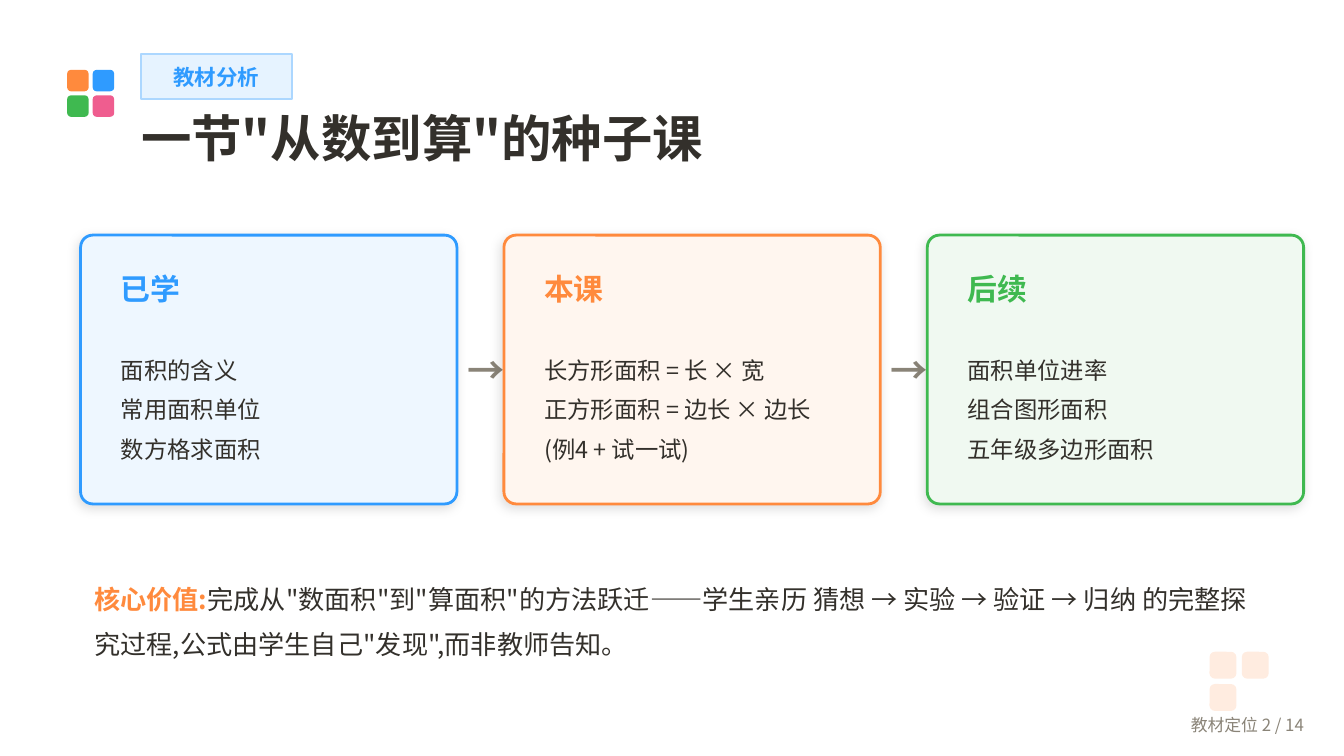
import pptx
import pptx.util
import pptx.dml.color
import pptx.enum.shapes
import pptx.enum.text
import pptx.oxml
import pptx.oxml.ns
import lxml.etree

RGBColor = pptx.dml.color.RGBColor
Inches = pptx.util.Inches
Pt = pptx.util.Pt
MSO_SHAPE = pptx.enum.shapes.MSO_SHAPE
ANCHOR = pptx.enum.text.MSO_ANCHOR
ALIGN = pptx.enum.text.PP_ALIGN

WHITE = RGBColor(0xFF, 0xFF, 0xFF)
BLUE = RGBColor(0x2F, 0x9B, 0xFF)
ORANGE = RGBColor(0xFF, 0x8A, 0x3D)
GREEN = RGBColor(0x3F, 0xB9, 0x50)
PINK = RGBColor(0xEF, 0x5D, 0x8F)
INK = RGBColor(0x33, 0x30, 0x2B)
GREY = RGBColor(0x8A, 0x84, 0x78)
PEACH = RGBColor(0xFF, 0xEC, 0xE0)
TAG_FILL = RGBColor(0xE6, 0xF3, 0xFF)
TAG_LINE = RGBColor(0xAC, 0xD7, 0xFF)
BLUE_TINT = RGBColor(0xEE, 0xF7, 0xFF)
ORANGE_TINT = RGBColor(0xFF, 0xF6, 0xEF)
GREEN_TINT = RGBColor(0xF0, 0xF9, 0xF1)

FONT = "Noto Sans CJK SC"
CARD_LEFT, CARD_TOP, CARD_WIDTH, CARD_HEIGHT = 0.6, 1.75, 2.8, 2
COLUMN_STEP = 3.15
CARD_PADDING = 0.2

CARDS = [
    ("已学", BLUE, BLUE_TINT, ["面积的含义", "常用面积单位", "数方格求面积"]),
    ("本课", ORANGE, ORANGE_TINT,
     ["长方形面积 = 长 × 宽", "正方形面积 = 边长 × 边长", "(例4 + 试一试)"]),
    ("后续", GREEN, GREEN_TINT, ["面积单位进率", "组合图形面积", "五年级多边形面积"]),
]
CORE_LABEL = "核心价值:"
CORE_TEXT = ("完成从\"数面积\"到\"算面积\"的方法跃迁——学生亲历 猜想 → 实验 → 验证 → 归纳 "
             "的完整探究过程,公式由学生自己\"发现\",而非教师告知。")


def apply_format(target, values):
    """Set every attribute named in values on the target."""
    for name, value in values.items():
        setattr(target, name, value)


def place(shape, left, top, width, height):
    """Move and size a shape, in inches."""
    box = {"left": left, "top": top, "width": width, "height": height}
    apply_format(shape, {name: Inches(value) for name, value in box.items()})


def add_run(paragraph, text, size, color, bold=False):
    """Add a run in the slide's font for Latin and East Asian text."""
    run = paragraph.add_run()
    run.text = text
    apply_format(run.font, {"name": FONT, "size": Pt(size), "bold": bold})
    run.font.color.rgb = color
    east_asian = lxml.etree.SubElement(run.font._element, pptx.oxml.ns.qn("a:ea"))
    east_asian.set("typeface", FONT)


def write(shape, lines, anchor=ANCHOR.MIDDLE, align=ALIGN.LEFT, spacing=None, inset=None):
    """Fill a shape with paragraphs, each a list of run arguments."""
    frame = shape.text_frame
    apply_format(frame, {"word_wrap": True, "vertical_anchor": anchor,
                         "auto_size": pptx.enum.text.MSO_AUTO_SIZE.NONE})
    if inset is not None:
        sides = ("margin_left", "margin_top", "margin_right", "margin_bottom")
        apply_format(frame, dict.fromkeys(sides, Inches(inset)))
    for index, runs in enumerate(lines):
        paragraph = frame.paragraphs[0] if index == 0 else frame.add_paragraph()
        properties = paragraph._p.get_or_add_pPr()
        if shape.is_placeholder:
            properties.set("marL", "0")
            properties.set("indent", "0")
            lxml.etree.SubElement(properties, pptx.oxml.ns.qn("a:buNone"))
        apply_format(paragraph, {"alignment": align, "space_before": Pt(0)})
        if spacing:
            paragraph.line_spacing = Pt(spacing)
        for run in runs:
            add_run(paragraph, *run)


def add_label(slide, box, run, **options):
    """Add a one-line text box."""
    label = slide.shapes.add_textbox(*map(Inches, box))
    write(label, [[run]], **options)


def fill_placeholder(placeholder, box, lines, **options):
    """Place a template placeholder above the shapes drawn so far and fill it."""
    place(placeholder, *box)
    placeholder._element.getparent().append(placeholder._element)
    write(placeholder, lines, **options)


def add_panel(slide, kind, box, fill, line=None, line_width=1, rounding=None):
    """Add a flat filled shape."""
    panel = slide.shapes.add_shape(kind, *map(Inches, box))
    panel.shadow.inherit = False
    panel.fill.solid()
    panel.fill.fore_color.rgb = fill
    if line is None:
        panel.line.fill.background()
    else:
        panel.line.color.rgb = line
        panel.line.width = Pt(line_width)
    if rounding is not None:
        panel.adjustments[0] = rounding
    return panel


def add_tiles(slide, left, top, size, step, rounding, colors):
    """Add small rounded squares in two columns, row by row."""
    for index, color in enumerate(colors):
        row, column = divmod(index, 2)
        box = (left + column * step, top + row * step, size, size)
        add_panel(slide, MSO_SHAPE.ROUNDED_RECTANGLE, box, color, rounding=rounding)


def add_soft_shadow(shape):
    """Give a shape a faint blurred shadow."""
    effects = shape._element.spPr.find(pptx.oxml.ns.qn("a:effectLst"))
    effects.append(pptx.oxml.parse_xml(
        f'<a:outerShdw {pptx.oxml.ns.nsdecls("a")} blurRad="{Pt(6)}" dist="{Pt(2)}" '
        f'dir="{135 * 60000}" algn="bl" rotWithShape="0">'
        '<a:srgbClr val="000000"><a:alpha val="12000"/></a:srgbClr></a:outerShdw>'))


def add_card(slide, column, placeholder):
    """Add one stage card with its heading and list."""
    heading, color, tint, items = CARDS[column]
    left = CARD_LEFT + column * COLUMN_STEP
    inner_left, inner_width = left + CARD_PADDING, CARD_WIDTH - 2 * CARD_PADDING
    card = add_panel(slide, MSO_SHAPE.ROUNDED_RECTANGLE,
                     (left, CARD_TOP, CARD_WIDTH, CARD_HEIGHT), tint, color, 1.5, 0.045)
    add_soft_shadow(card)
    add_label(slide, (inner_left, CARD_TOP + CARD_PADDING, inner_width, 0.4),
              (heading, 16, color, True))
    fill_placeholder(placeholder, (inner_left, 2.38, inner_width, 1.25),
                     [[(item, 12.5, INK)] for item in items], spacing=21)
    if column < len(CARDS) - 1:
        add_label(slide, (left + CARD_WIDTH - 0.02, 2.55, 0.4, 0.4), ("→", 20, GREY, True))


def main():
    """Build the slide and save it."""
    presentation = pptx.Presentation()
    presentation.slide_width, presentation.slide_height = Inches(10), Inches(5.625)
    slide = presentation.slides.add_slide(presentation.slide_layouts.get_by_name("Comparison"))
    slide.background.fill.solid()
    slide.background.fill.fore_color.rgb = WHITE
    title, *bodies = slide.placeholders

    add_tiles(slide, 9, 4.85, 0.2, 0.24, 0.2, [PEACH] * 3)
    add_tiles(slide, 0.5, 0.52, 0.16, 0.19, 0.18, [ORANGE, BLUE, GREEN, PINK])
    tag = add_panel(slide, MSO_SHAPE.RECTANGLE, (1.05, 0.4, 1.12, 0.34), TAG_FILL, TAG_LINE)
    write(tag, [[("教材分析", 11.5, BLUE, True)]], align=ALIGN.CENTER, inset=0)
    fill_placeholder(title, (1.05, 0.8, 8.4, 0.55),
                     [[("一节\"从数到算\"的种子课", 27, INK, True)]],
                     anchor=ANCHOR.TOP, inset=0)
    for column in range(len(CARDS)):
        add_card(slide, column, bodies[column])
    fill_placeholder(bodies[-1], (0.6, 4.15, 8.85, 0.85),
                     [[(CORE_LABEL, 14, ORANGE, True), (CORE_TEXT, 14, INK)]], spacing=24)
    add_label(slide, (8, 5.24, 1.8, 0.3), ("教材定位 2 / 14", 9, GREY), align=ALIGN.RIGHT)
    presentation.save("out.pptx")


if __name__ == "__main__":
    main()
